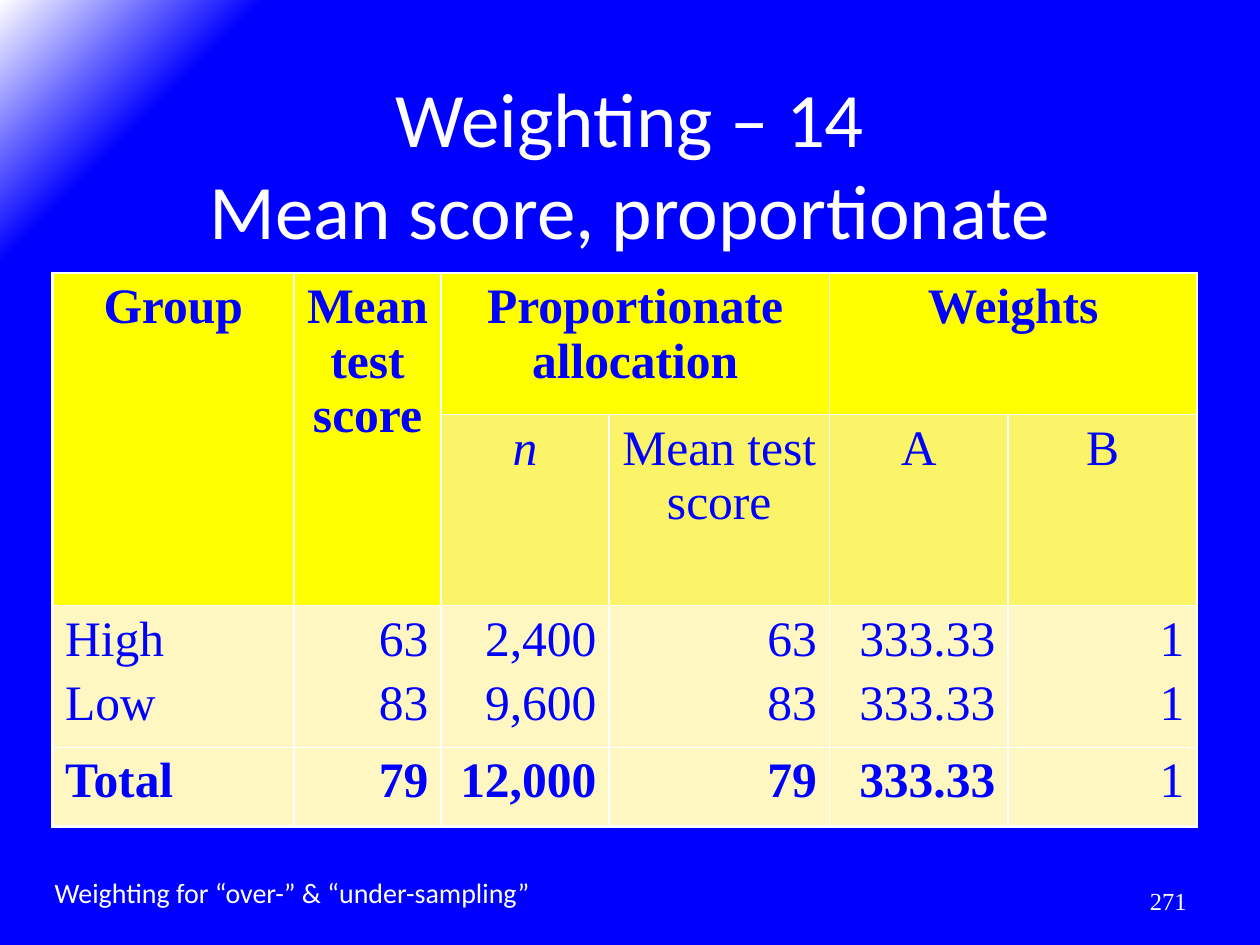
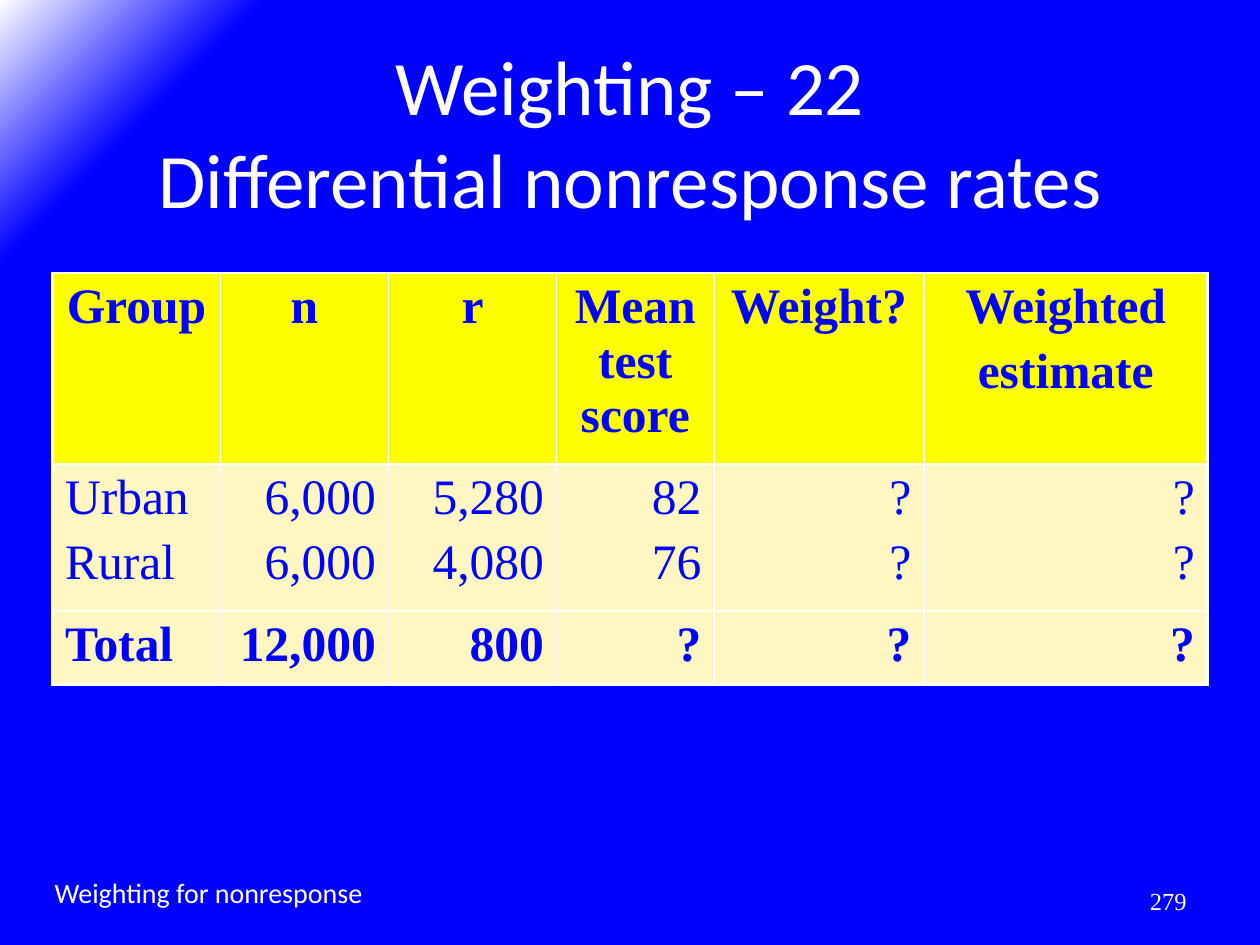
import dataclasses

import lxml.etree
import pptx
import pptx.dml.color
import pptx.enum.text
import pptx.oxml
import pptx.oxml.ns
import pptx.util

Inches = pptx.util.Inches
Pt = pptx.util.Pt
ALIGN = pptx.enum.text.PP_ALIGN
MIDDLE = pptx.enum.text.MSO_ANCHOR.MIDDLE
DRAWING = pptx.oxml.ns.nsdecls("a")


@dataclasses.dataclass(frozen=True)
class Theme:
    blue: str = "0000FF"
    white: str = "FFFFFF"
    header_fill: str = "FFFF00"
    subheader_fill: str = "FBF468"
    body_fill: str = "FEF7C2"
    sans: str = "Calibri"
    serif: str = "Times New Roman"
    title_size: float = 52.8
    table_size: float = 34
    footer_size: float = 19.2
    number_size: float = 16.8
    outer_line: float = 2.25
    inner_line: float = 1


@dataclasses.dataclass(frozen=True)
class RowStyle:
    fill: str
    bold: bool = False
    centred: bool = False


THEME = Theme()
HEADER = RowStyle(THEME.header_fill, bold=True, centred=True)
SUBHEADER = RowStyle(THEME.subheader_fill, centred=True)
BODY = RowStyle(THEME.body_fill)
TOTAL = RowStyle(THEME.body_fill, bold=True)


class Deck:
    def __init__(self, theme):
        self.theme = theme
        self.presentation = pptx.Presentation()
        self.presentation.slide_width = Inches(12)
        self.presentation.slide_height = Inches(9)
        self.slide = None
        self.set_background()

    def set_background(self):
        """Give the master a blue background with a white top left corner."""
        master = self.presentation.slide_master
        master.background.fill.solid()
        properties = master.element.find(".//" + pptx.oxml.ns.qn("p:bgPr"))
        stops = [(0, self.theme.blue), (88, self.theme.blue), (100, self.theme.white)]
        stop_xml = "".join(
            f'<a:gs pos="{percent * 1000}"><a:srgbClr val="{color}"/></a:gs>'
            for percent, color in stops)
        properties.replace(properties[0], pptx.oxml.parse_xml(
            f'<a:gradFill {DRAWING} rotWithShape="1"><a:gsLst>{stop_xml}</a:gsLst>'
            '<a:path path="circle"><a:fillToRect l="100000" t="100000"/></a:path>'
            '</a:gradFill>'))

    def format_paragraph(self, paragraph, font, size, color, align, bold=False):
        paragraph.alignment = align
        for run in paragraph.runs:
            run.font.name = font
            run.font.size = Pt(size)
            run.font.bold = bold
            run.font.color.rgb = pptx.dml.color.RGBColor.from_string(color)

    def add_slide(self, title, title_top, footer, number):
        layout = self.presentation.slide_layouts[5]
        self.slide = self.presentation.slides.add_slide(layout)
        self.add_title(title, title_top)
        self.add_text(footer, (0.4, 8.2, 5.1, 0.6), self.theme.sans,
                      self.theme.footer_size, ALIGN.LEFT, (0.12, 0.06))
        self.add_text(number, (8.6, 8.34, 2.8, 0.48), self.theme.serif,
                      self.theme.number_size, ALIGN.RIGHT, (0.1, 0.05))

    def add_title(self, text, top):
        title = self.slide.shapes.title
        title.left, title.top = Inches(0.9), Inches(top)
        title.width, title.height = Inches(10.2), Inches(1.5)
        frame = title.text_frame
        frame.text = text
        frame.vertical_anchor = MIDDLE
        frame.auto_size = pptx.enum.text.MSO_AUTO_SIZE.NONE
        self.format_paragraph(frame.paragraphs[0], self.theme.sans,
                              self.theme.title_size, self.theme.white, ALIGN.CENTER)

    def add_text(self, text, box, font, size, align, margins):
        frame = self.slide.shapes.add_textbox(*map(Inches, box)).text_frame
        frame.word_wrap = True
        frame.vertical_anchor = MIDDLE
        frame.margin_left = frame.margin_right = Inches(margins[0])
        frame.margin_top = frame.margin_bottom = Inches(margins[1])
        frame.text = text
        self.format_paragraph(frame.paragraphs[0], font, size, self.theme.white, align)

    def add_table(self, column_widths, rows, merges=()):
        """Rows are (height, style, texts); merges are (row, column, last row, last column)."""
        frame = self.slide.shapes.add_table(
            len(rows), len(column_widths), Inches(0.5), Inches(2.6),
            Inches(sum(column_widths)), Inches(sum(row[0] for row in rows)))
        table = frame.table
        table.first_row = table.horz_banding = False
        for column, width in zip(table.columns, column_widths):
            column.width = Inches(width)
        for top, left, bottom, right in merges:
            table.cell(top, left).merge(table.cell(bottom, right))
        for row_index, (height, style, texts) in enumerate(rows):
            table.rows[row_index].height = Inches(height)
            for column_index, text in enumerate(texts):
                self.fill_cell(table, row_index, column_index, text, style)
        return table

    def fill_cell(self, table, row, column, text, style):
        cell = table.cell(row, column)
        self.add_borders(cell, {
            "L": column == 0,
            "R": column + cell.span_width == len(table.columns),
            "T": row == 0,
            "B": row + cell.span_height == len(table.rows)})
        cell.fill.solid()
        cell.fill.fore_color.rgb = pptx.dml.color.RGBColor.from_string(style.fill)
        cell.margin_left = cell.margin_right = Inches(0.12)
        cell.margin_top = cell.margin_bottom = Inches(0.06)
        if cell.is_spanned:
            return
        cell.text_frame.text = text
        if style.centred:
            align = ALIGN.CENTER
        else:
            align = ALIGN.LEFT if column == 0 else ALIGN.RIGHT
        for paragraph in cell.text_frame.paragraphs:
            paragraph.space_before = Pt(0.2 * self.theme.table_size)
            self.format_paragraph(paragraph, self.theme.serif, self.theme.table_size,
                                  self.theme.blue, align, style.bold)

    def add_borders(self, cell, outer_sides):
        properties = cell._tc.get_or_add_tcPr()
        for side, is_outer in outer_sides.items():
            points = self.theme.outer_line if is_outer else self.theme.inner_line
            properties.append(pptx.oxml.parse_xml(
                f'<a:ln{side} {DRAWING} w="{Pt(points)}"><a:solidFill>'
                f'<a:srgbClr val="{self.theme.white}"/></a:solidFill></a:ln{side}>'))


def cell_font(table, row, column):
    return table.cell(row, column).text_frame.paragraphs[0].runs[0].font


def build_proportionate(deck):
    deck.add_slide("Weighting – 14\vMean score, proportionate", 0.8,
                   "Weighting for “over-” & “under-sampling”", "271")
    table = deck.add_table(
        [2.3, 1.4, 1.6, 2.1, 1.7, 1.8],
        [(1.35, HEADER, ["Group", "Mean test score", "Proportionate allocation", "",
                         "Weights", ""]),
         (1.35, SUBHEADER, ["", "", "n", "Mean test score", "A", "B"]),
         (1.35, BODY, ["High\nLow", "63\n83", "2,400\n9,600", "63\n83",
                       "333.33\n333.33", "1\n1"]),
         (0.75, TOTAL, ["Total", "79", "12,000", "79", "333.33", "1"])],
        merges=[(0, 0, 1, 0), (0, 1, 1, 1), (0, 2, 0, 3), (0, 4, 0, 5)])
    cell_font(table, 1, 2).italic = True
    cell_font(table, 3, 5).bold = False


def build_nonresponse(deck):
    deck.add_slide("Weighting – 22\vDifferential nonresponse rates", 0.5,
                   "Weighting for nonresponse", "279")
    deck.add_table(
        [1.6, 1.6, 1.6, 1.5, 2, 2.7],
        [(1.8, HEADER, ["Group", "n", "r", "Mean test score", "Weight?",
                        "Weighted\nestimate"]),
         (1.4, BODY, ["Urban\nRural", "6,000\n6,000", "5,280\n4,080", "82\n76",
                      "?\n?", "?\n?"]),
         (0.7, TOTAL, ["Total", "12,000", "800", "?", "?", "?"])])


def main():
    deck = Deck(THEME)
    build_proportionate(deck)
    build_nonresponse(deck)
    deck.presentation.save("out.pptx")


if __name__ == "__main__":
    main()
